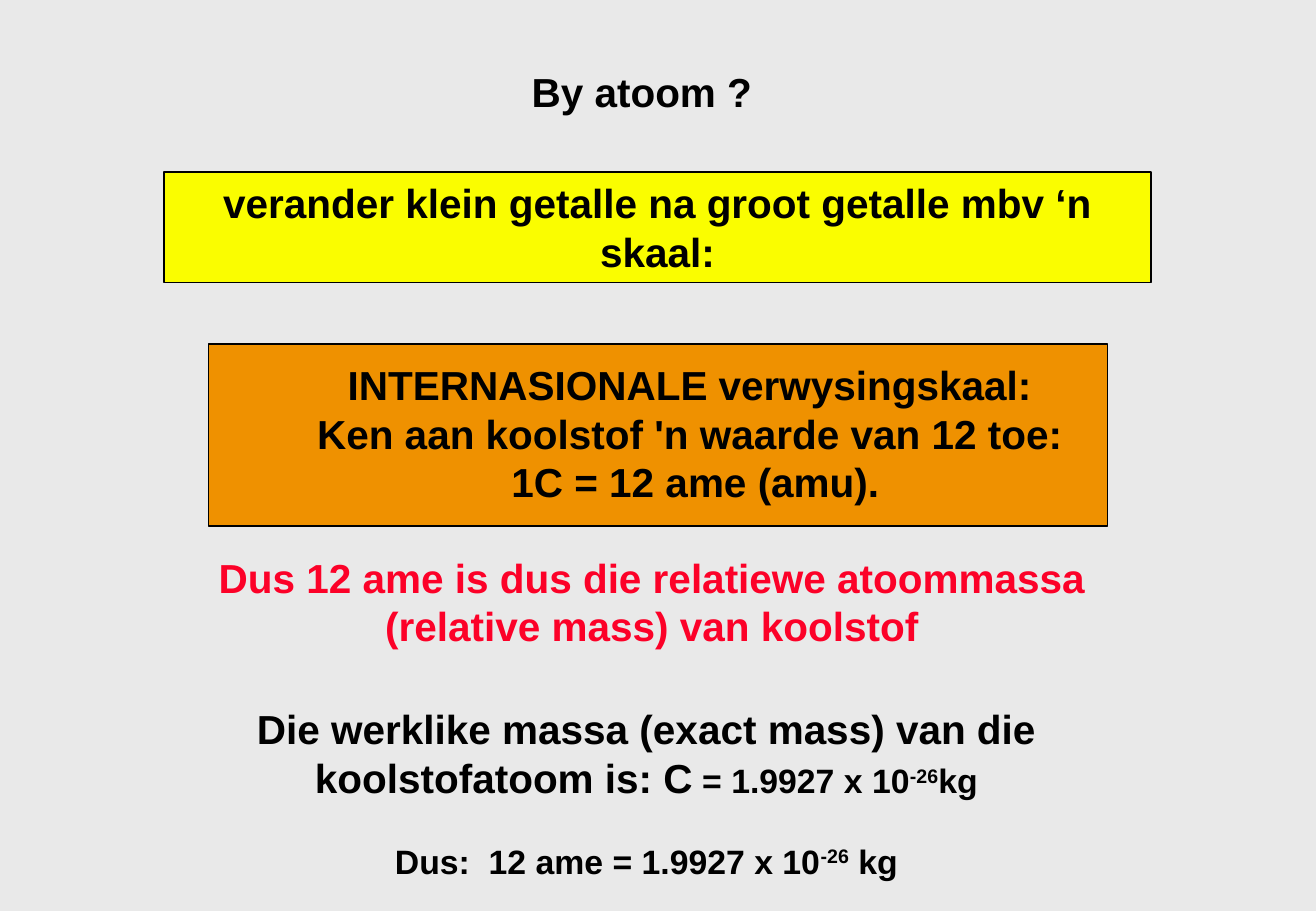
from dataclasses import dataclass

from pptx import Presentation
from pptx.dml.color import RGBColor
from pptx.enum.shapes import MSO_SHAPE
from pptx.enum.text import MSO_ANCHOR, MSO_AUTO_SIZE, PP_ALIGN
from pptx.util import Pt

RECTANGLE = MSO_SHAPE.RECTANGLE
TOP = MSO_ANCHOR.TOP
CENTER = PP_ALIGN.CENTER
NO_AUTOFIT = MSO_AUTO_SIZE.NONE
EMU_PER_PX = 7620
TITLE_ONLY = 5


@dataclass(frozen=True)
class Theme:
    font: str = "Arial"
    background: str = "E9E9E9"
    ink: str = "000000"
    accent: str = "FC0128"
    yellow: str = "FAFD00"
    orange: str = "EF9100"
    large: int = 24
    small: int = 20


def px(*lengths):
    return [length * EMU_PER_PX for length in lengths]


def add_span(para, text, *, font, size, color, superscript=False):
    span = para.add_run()
    span.text = text
    span.font.name = font
    span.font.size = Pt(size)
    span.font.bold = True
    span.font.color.rgb = RGBColor.from_string(color)
    if superscript:
        span._r.get_or_add_rPr().set("baseline", "30000")


class SlideBuilder:
    def __init__(self, deck, theme):
        self.theme = theme
        self.page = deck.slides.add_slide(deck.slide_layouts[TITLE_ONLY])
        background = self.page.background.fill
        background.solid()
        background.fore_color.rgb = RGBColor.from_string(theme.background)

    def fill_text(self, box, paragraphs, color=None, gap=0):
        frame = box.text_frame
        frame.word_wrap = True
        frame.auto_size = NO_AUTOFIT
        frame.vertical_anchor = TOP
        for index, spans in enumerate(paragraphs):
            para = frame.add_paragraph() if index else frame.paragraphs[0]
            para.alignment = CENTER
            para.space_before = Pt(gap if index else 0)
            for text, size, superscript in spans:
                add_span(para, text, font=self.theme.font, size=size,
                         color=color or self.theme.ink, superscript=superscript)

    def title(self, place, text):
        box = self.page.shapes.title
        box.left, box.top, box.width, box.height = px(*place)
        self.fill_text(box, [[(text, self.theme.large, False)]])

    def panel(self, place, fill):
        panel = self.page.shapes.add_shape(RECTANGLE, *px(*place))
        panel.shadow.inherit = False
        panel.fill.solid()
        panel.fill.fore_color.rgb = RGBColor.from_string(fill)
        panel.line.color.rgb = RGBColor.from_string(self.theme.ink)
        panel.line.width = Pt(1)
        return panel

    def text(self, place, paragraphs, **style):
        box = self.page.shapes.add_textbox(*px(*place))
        self.fill_text(box, paragraphs, **style)


def main():
    deck = Presentation()
    deck.slide_width, deck.slide_height = px(1300, 900)
    theme = Theme()
    slide = SlideBuilder(deck, theme)
    large, small = theme.large, theme.small

    slide.panel((206, 340, 888, 180), theme.orange)
    scale_lines = (
        "INTERNASIONALE verwysingskaal: ",
        "Ken aan koolstof 'n waarde van 12 toe: ",
        "1C = 12 ame (amu).",
    )
    slide.text((140, 350, 1094, 157), [[(line, large, False)] for line in scale_lines])
    slide.title((130, 60, 1008, 61), "By atoom ?")
    slide.text(
        (140, 540, 1008, 109),
        [[("Dus 12 ame is dus die relatiewe atoommassa (relative mass) van koolstof",
           large, False)]],
        color=theme.accent,
    )
    exponent = ("-26", small, True)
    slide.text(
        (140, 690, 997, 190),
        [
            [("Die werklike massa (exact mass) van die koolstofatoom is: C", large, False),
             (" = 1.9927 x 10", small, False), exponent, ("kg", small, False)],
            [("Dus:  12 ame = 1.9927 x 10", small, False), exponent,
             (" kg", small, False)],
        ],
        gap=23,
    )
    scale_panel = slide.panel((162, 170, 975, 109), theme.yellow)
    slide.fill_text(
        scale_panel,
        [[("verander klein getalle na groot getalle mbv ‘n skaal:", large, False)]],
    )
    deck.save("out.pptx")


if __name__ == "__main__":
    main()
